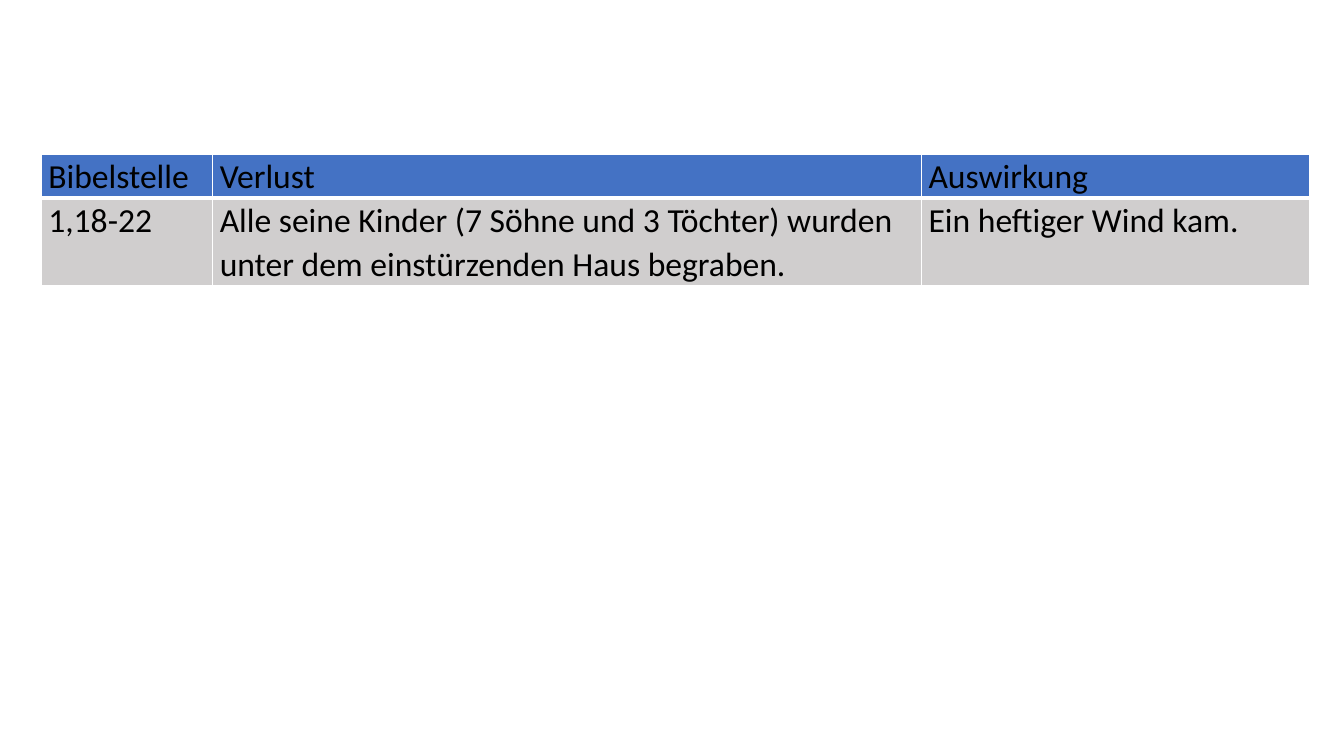
from dataclasses import dataclass

from lxml.etree import SubElement
from pptx import Presentation
from pptx.dml.color import RGBColor
from pptx.oxml.ns import qn
from pptx.util import Inches, Pt


@dataclass(frozen=True)
class Theme:
    font: str = "Calibri"
    text_size: float = 24
    line_spacing: float = 1.07
    text: str = "000000"
    header: str = "4472C4"
    body: str = "D0CECE"
    border: str = "FFFFFF"
    thin: float = 1
    thick: float = 3


THEME = Theme()
SLIDE_WIDTH, SLIDE_HEIGHT = 13.33, 7.5
TABLE_BOX = (0.41, 1.53, 12.58, 1.27)
COLUMN_SHARES = (1.7, 7.03, 3.85)
ROW_LINES = (1, 2)
LOSSES = (
    ("Bibelstelle", "Verlust", "Auswirkung"),
    (
        "1,18-22",
        "Alle seine Kinder (7 Söhne und 3 Töchter) wurden unter dem einstürzenden Haus begraben.",
        "Ein heftiger Wind kam.",
    ),
)


def write_text(frame, text, *, size=THEME.text_size, color=THEME.text, bold=False):
    paragraph = frame.paragraphs[0]
    paragraph.line_spacing = THEME.line_spacing
    run = paragraph.add_run()
    run.text = text
    run.font.name = THEME.font
    run.font.size = Pt(size)
    run.font.bold = bold
    run.font.color.rgb = RGBColor.from_string(color)


def set_borders(cell, **widths):
    """Draw cell borders; widths in points by side, in the order L, R, T, B."""
    properties = cell._tc.get_or_add_tcPr()
    for side, width in widths.items():
        line = SubElement(properties, qn(f"a:ln{side}"), w=str(Pt(width)))
        fill = SubElement(line, qn("a:solidFill"))
        SubElement(fill, qn("a:srgbClr"), val=THEME.border)


def format_cell(cell, fill, top, bottom):
    set_borders(cell, L=THEME.thin, R=THEME.thin, T=top, B=bottom)
    cell.fill.solid()
    cell.fill.fore_color.rgb = RGBColor.from_string(fill)
    cell.margin_left = cell.margin_right = Inches(0.07)
    cell.margin_top = cell.margin_bottom = 0


def add_loss_table(slide, box, rows):
    left, top, width, height = box
    table = slide.shapes.add_table(
        len(rows), len(COLUMN_SHARES), *(Inches(length) for length in box)
    ).table
    for column, share in zip(table.columns, COLUMN_SHARES):
        column.width = Inches(width * share / sum(COLUMN_SHARES))
    for row, lines in zip(table.rows, ROW_LINES):
        row.height = Inches(height * lines / sum(ROW_LINES))
    for row_index, texts in enumerate(rows):
        is_header = row_index == 0
        fill = THEME.header if is_header else THEME.body
        top_width = THEME.thick if row_index == 1 else THEME.thin
        bottom_width = THEME.thick if is_header else THEME.thin
        for column_index, text in enumerate(texts):
            cell = table.cell(row_index, column_index)
            format_cell(cell, fill, top_width, bottom_width)
            write_text(cell.text_frame, text)


def main():
    presentation = Presentation()
    presentation.slide_width = Inches(SLIDE_WIDTH)
    presentation.slide_height = Inches(SLIDE_HEIGHT)
    slide = presentation.slides.add_slide(presentation.slide_layouts[6])
    add_loss_table(slide, TABLE_BOX, LOSSES)
    presentation.save("out.pptx")


if __name__ == "__main__":
    main()
